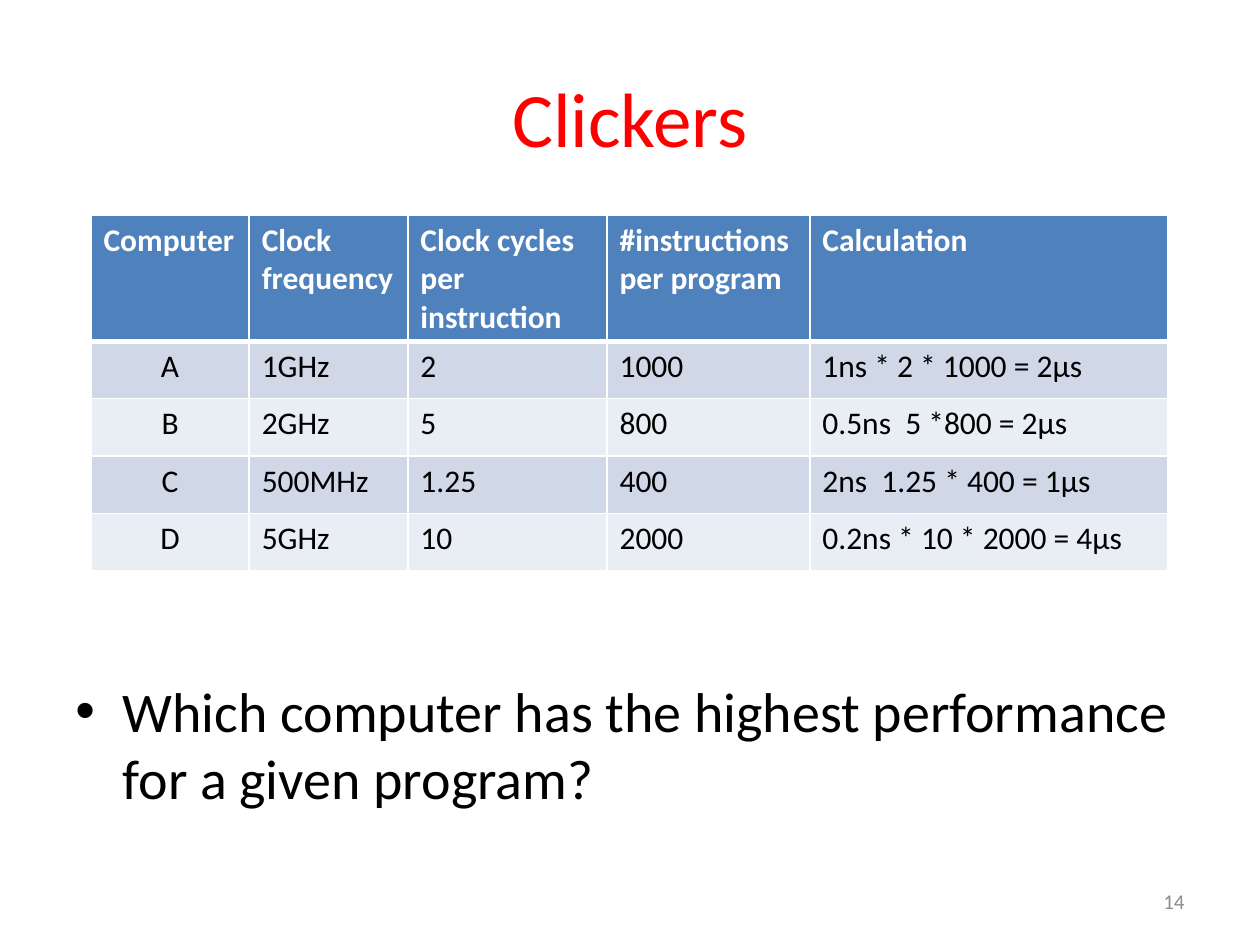
import pptx
import pptx.dml.color
import pptx.enum.text
import pptx.oxml
import pptx.oxml.ns
import pptx.util

Pt = pptx.util.Pt
ALIGN = pptx.enum.text.PP_ALIGN
ANCHOR = pptx.enum.text.MSO_ANCHOR

FONT = "Calibri"
TITLE = "Clickers"
QUESTION = "Which computer has the highest performance for a given program?"
SLIDE_NUMBER = "14"
ROWS = [
    ("Computer", "Clock frequency", "Clock cycles per instruction",
     "#instructions per program", "Calculation"),
    ("A", "1GHz", "2", "1000", "1ns * 2 * 1000 = 2µs"),
    ("B", "2GHz", "5", "800", "0.5ns  5 *800 = 2µs"),
    ("C", "500MHz", "1.25", "400", "2ns  1.25 * 400 = 1µs"),
    ("D", "5GHz", "10", "2000", "0.2ns * 10 * 2000 = 4µs"),
]
COLUMN_WIDTHS = [90.4, 90.7, 113.8, 115.9, 204.5]
HEADER_HEIGHT, ROW_HEIGHT = 56.9, 32.8
HEADER_FILL = "4F81BD"
BAND_FILLS = ["D0D8E8", "E9EDF4"]


def rgb(color):
    return pptx.dml.color.RGBColor.from_string(color)


def write(text_frame, text, size, color, align=ALIGN.LEFT, bold=False):
    """Set one paragraph of text, format it and return the paragraph."""
    text_frame.text = text
    text_frame.word_wrap = True
    paragraph = text_frame.paragraphs[0]
    paragraph.alignment = align
    font = paragraph.runs[0].font
    font.name, font.size, font.bold = FONT, Pt(size), bold
    font.color.rgb = rgb(color)
    return paragraph


def add_text(slide, box, *text_format):
    shape = slide.shapes.add_textbox(*map(Pt, box))
    return shape.text_frame, write(shape.text_frame, *text_format)


def add_bullet(paragraph, indent):
    properties = paragraph._p.get_or_add_pPr()
    properties.set("marL", str(Pt(indent)))
    properties.set("indent", str(-Pt(indent)))
    namespace = pptx.oxml.ns.nsdecls("a")
    properties.append(pptx.oxml.parse_xml(f'<a:buFont {namespace} typeface="Arial"/>'))
    properties.append(pptx.oxml.parse_xml(f'<a:buChar {namespace} char="•"/>'))


def set_borders(cell, bottom, top):
    """Draw white borders; they must come before the fill in the cell properties."""
    properties = cell._tc.get_or_add_tcPr()
    sides = [("L", 1), ("R", 1), ("T", top), ("B", bottom)]
    for position, (side, width) in enumerate(sides):
        properties.insert(position, pptx.oxml.parse_xml(
            f'<a:ln{side} {pptx.oxml.ns.nsdecls("a")} w="{Pt(width)}">'
            f'<a:solidFill><a:srgbClr val="FFFFFF"/></a:solidFill></a:ln{side}>'))


def add_computer_table(slide):
    height = HEADER_HEIGHT + ROW_HEIGHT * (len(ROWS) - 1)
    table = slide.shapes.add_table(
        len(ROWS), len(COLUMN_WIDTHS), Pt(52), Pt(123),
        Pt(sum(COLUMN_WIDTHS)), Pt(height)).table
    for column, width in zip(table.columns, COLUMN_WIDTHS):
        column.width = Pt(width)
    for row_index, values in enumerate(ROWS):
        header = row_index == 0
        table.rows[row_index].height = Pt(HEADER_HEIGHT if header else ROW_HEIGHT)
        for column_index, value in enumerate(values):
            cell = table.cell(row_index, column_index)
            centered = column_index == 0 and not header
            write(cell.text_frame, value, 18, "FFFFFF" if header else "000000",
                  ALIGN.CENTER if centered else ALIGN.LEFT, header)
            cell.fill.solid()
            cell.fill.fore_color.rgb = rgb(
                HEADER_FILL if header else BAND_FILLS[(row_index - 1) % 2])
            set_borders(cell, bottom=3 if header else 1, top=3 if row_index == 1 else 1)


def main():
    presentation = pptx.Presentation()
    presentation.slide_width, presentation.slide_height = Pt(720), Pt(540)
    slide = presentation.slides.add_slide(presentation.slide_layouts[5])

    title = slide.shapes.title
    title.left, title.top, title.width, title.height = map(Pt, (36, 21.6, 648, 90))
    title.text_frame.vertical_anchor = ANCHOR.MIDDLE
    write(title.text_frame, TITLE, 44, "FF0000", ALIGN.CENTER)

    _, question = add_text(slide, (36, 383, 669.6, 99.4), QUESTION, 32, "000000")
    question.space_before = Pt(6.4)
    add_bullet(question, 27)

    number_frame, _ = add_text(
        slide, (516, 500.5, 168, 28.8), SLIDE_NUMBER, 12, "8C8C8C", ALIGN.RIGHT)
    number_frame.vertical_anchor = ANCHOR.MIDDLE

    add_computer_table(slide)
    presentation.save("out.pptx")


if __name__ == "__main__":
    main()
